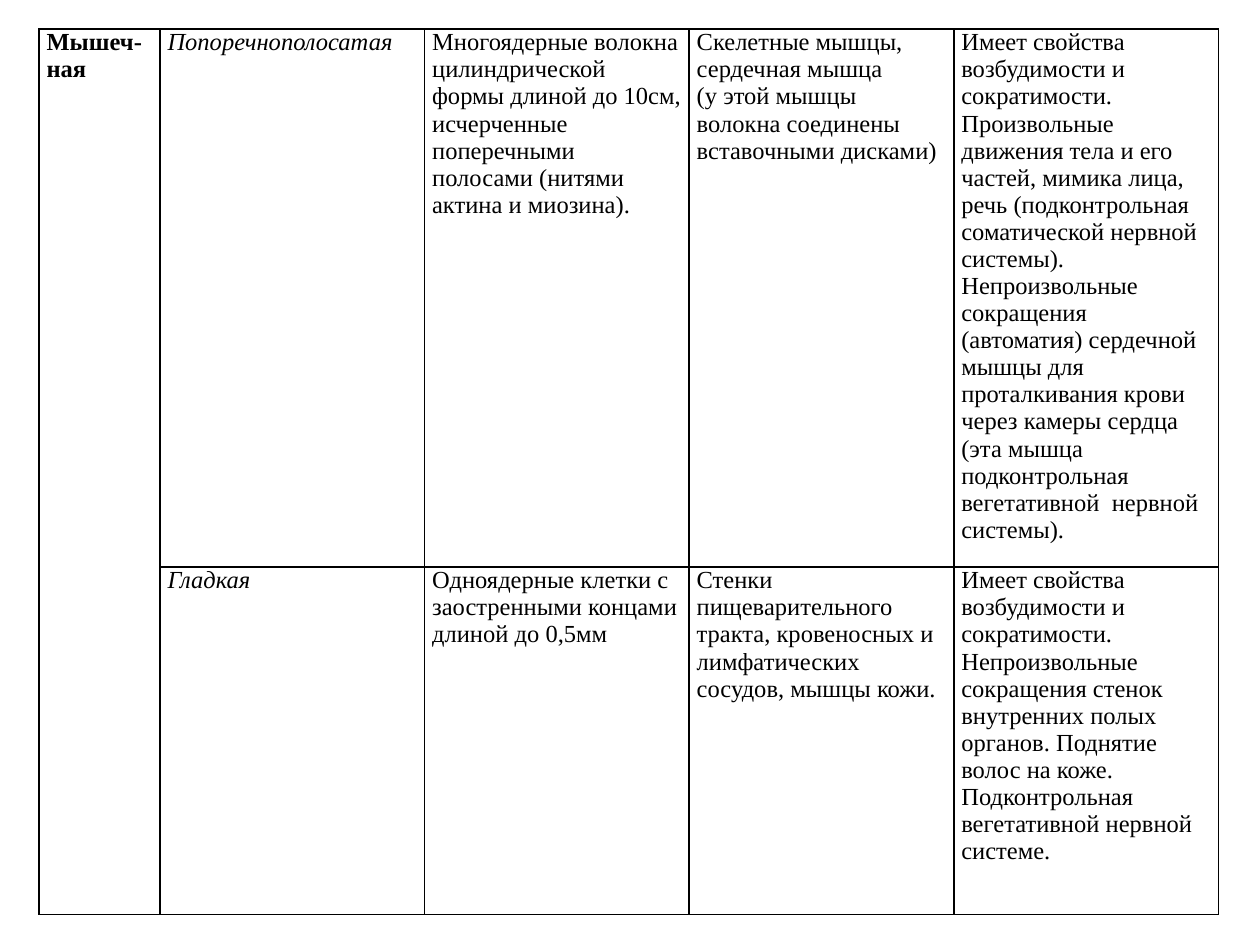
"""Build a slide with a table describing the two kinds of muscle tissue."""
import pptx
import pptx.dml.color
import pptx.oxml
import pptx.oxml.ns
import pptx.util
from pptx.util import Inches

BLACK = pptx.dml.color.RGBColor(0x00, 0x00, 0x00)
FONT_NAME = "Times New Roman"
FONT_SIZE = 14
BORDER_WIDTH = 1
SIDE_MARGIN = 0.06

LEFT, TOP = 0.31, 0.23
COLUMN_WIDTHS = [0.96] + [2.1] * 4
ROW_HEIGHTS = [4.27, 2.76]
GROUP_COLUMN, KIND_COLUMN = 0, 1

TISSUES = [
    [
        "Мышеч-ная",
        "Попоречнополосатая",
        "Многоядерные волокна цилиндрической формы длиной до 10см, "
        "исчерченные поперечными полосами (нитями актина и миозина).",
        "Скелетные мышцы, сердечная мышца\n"
        "(у этой мышцы волокна соединены вставочными дисками)",
        "Имеет свойства возбудимости и сократимости. Произвольные движения "
        "тела и его частей, мимика лица, речь (подконтрольная соматической "
        "нервной системы). Непроизвольные сокращения (автоматия) сердечной "
        "мышцы для проталкивания крови через камеры сердца (эта мышца "
        "подконтрольная вегетативной  нервной системы).",
    ],
    [
        "",
        "Гладкая",
        "Одноядерные клетки с заостренными концами длиной до 0,5мм",
        "Стенки пищеварительного  тракта, кровеносных и лимфатических "
        "сосудов, мышцы кожи.",
        "Имеет свойства возбудимости и сократимости. Непроизвольные "
        "сокращения стенок внутренних полых органов. Поднятие волос на коже. "
        "Подконтрольная\nвегетативной нервной системе.",
    ],
]


def add_borders(cell):
    properties = cell._tc.get_or_add_tcPr()
    for position, side in enumerate(("lnL", "lnR", "lnT", "lnB")):
        line = pptx.oxml.parse_xml(
            f'<a:{side} {pptx.oxml.ns.nsdecls("a")} '
            f'w="{pptx.util.Pt(BORDER_WIDTH)}"><a:solidFill>'
            f'<a:srgbClr val="{BLACK}"/></a:solidFill></a:{side}>'
        )
        properties.insert(position, line)


def fill_cell(cell, text, column):
    cell.margin_left = cell.margin_right = Inches(SIDE_MARGIN)
    cell.margin_top = cell.margin_bottom = 0
    cell.fill.background()
    add_borders(cell)
    cell.text_frame.text = text
    for paragraph in cell.text_frame.paragraphs:
        paragraph.font.size = pptx.util.Pt(FONT_SIZE)
        for span in paragraph.runs:
            span.font.name = FONT_NAME
            span.font.size = pptx.util.Pt(FONT_SIZE)
            span.font.color.rgb = BLACK
            span.font.bold = column == GROUP_COLUMN
            span.font.italic = column == KIND_COLUMN


def add_tissue_table(page):
    frame = page.shapes.add_table(
        len(ROW_HEIGHTS), len(COLUMN_WIDTHS), Inches(LEFT), Inches(TOP),
        Inches(sum(COLUMN_WIDTHS)), Inches(sum(ROW_HEIGHTS)),
    )
    table = frame.table
    table.first_row = table.horz_banding = False
    for column, width in zip(table.columns, COLUMN_WIDTHS):
        column.width = Inches(width)
    for row, height in zip(table.rows, ROW_HEIGHTS):
        row.height = Inches(height)
    for row, texts in zip(table.rows, TISSUES):
        for column, text in enumerate(texts):
            fill_cell(row.cells[column], text, column)
    last_row = len(ROW_HEIGHTS) - 1
    table.cell(0, GROUP_COLUMN).merge(table.cell(last_row, GROUP_COLUMN))


def main():
    deck = pptx.Presentation()
    deck.slide_width, deck.slide_height = Inches(10), Inches(7.5)
    page = deck.slides.add_slide(deck.slide_layouts[6])
    add_tissue_table(page)
    deck.save("out.pptx")


if __name__ == "__main__":
    main()
